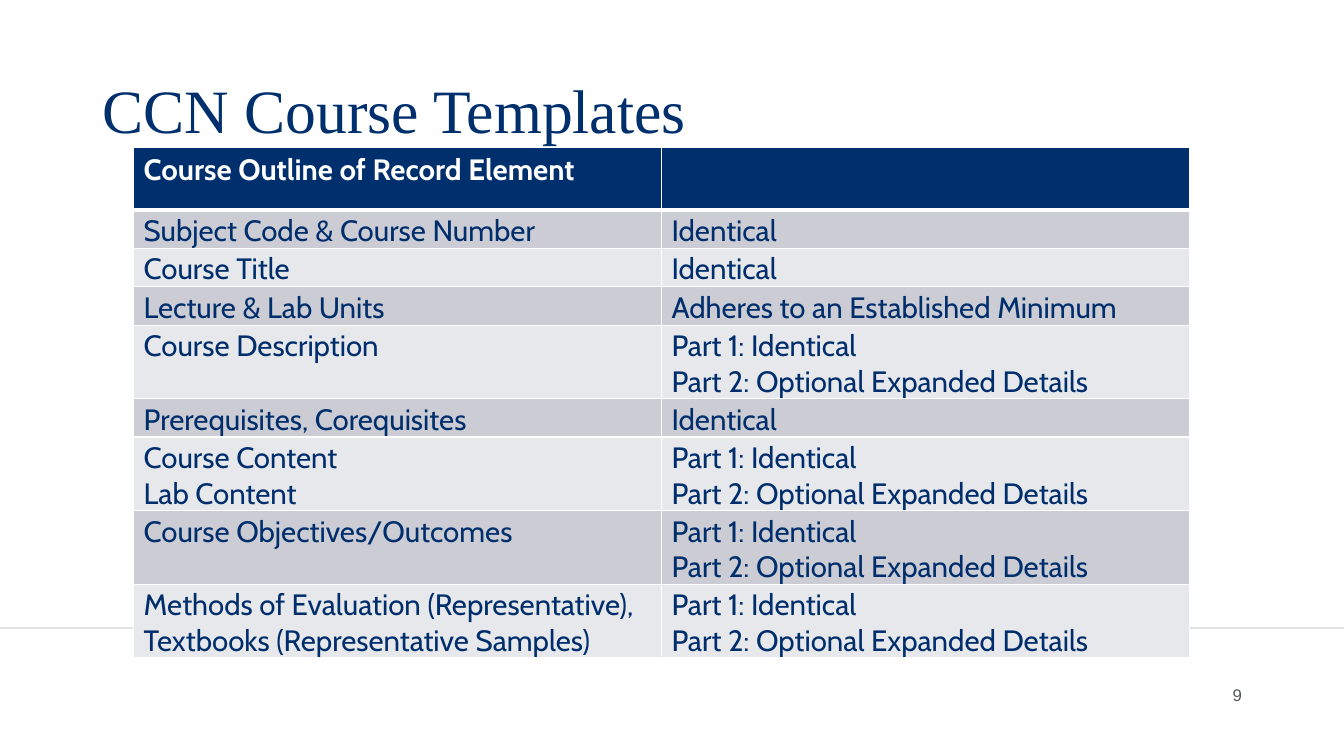
import pptx
import pptx.dml.color
import pptx.enum.shapes
import pptx.enum.text
import pptx.oxml
import pptx.oxml.ns
import pptx.util

RGB = pptx.dml.color.RGBColor
NAVY = RGB(0x00, 0x2F, 0x6D)
INK = RGB(0x00, 0x2E, 0x6C)
WHITE = RGB(0xFF, 0xFF, 0xFF)
DARK = RGB(0xCC, 0xCD, 0xD4)
LIGHT = RGB(0xE7, 0xE8, 0xEB)
RULE = RGB(0xE3, 0xE5, 0xE5)
GREY = RGB(0x53, 0x57, 0x5A)

ALIGN = pptx.enum.text.PP_ALIGN
PARTS = ["Part 1: Identical", "Part 2: Optional Expanded Details"]
ROWS = [
    (8.27, ["Course Outline of Record Element"], []),
    (5.07, ["Subject Code & Course Number"], ["Identical"]),
    (5.07, ["Course Title"], ["Identical"]),
    (5.07, ["Lecture & Lab Units"], ["Adheres to an Established Minimum"]),
    (9.6, ["Course Description"], PARTS),
    (5.07, ["Prerequisites, Corequisites"], ["Identical"]),
    (9.07, ["Course Content", "Lab Content"], PARTS),
    (9.07, ["Course Objectives/Outcomes"], PARTS),
    (9.07, ["Methods of Evaluation (Representative),",
            "Textbooks (Representative Samples)"], PARTS),
]


class Deck:
    def __init__(self):
        self.show = pptx.Presentation()
        self.show.slide_width = pptx.util.Inches(13.33)
        self.show.slide_height = pptx.util.Inches(7.5)
        self.slide = self.show.slides.add_slide(self.show.slide_layouts[6])

    def wide(self, share):
        return round(self.show.slide_width * share / 100)

    def high(self, share):
        return round(self.show.slide_height * share / 100)

    def box(self, left, top, width, height):
        return self.wide(left), self.high(top), self.wide(width), self.high(height)

    def run(self, para, text, size, face, color, bold=False):
        run = para.add_run()
        run.text = text
        font = run.font
        font.size = pptx.util.Pt(size)
        font.name = face
        font.bold = bold
        font.color.rgb = color

    def text(self, place, text, size, face, color, align=ALIGN.LEFT, space=1.0):
        frame = self.slide.shapes.add_textbox(*self.box(*place)).text_frame
        frame.word_wrap = True
        frame.vertical_anchor = pptx.enum.text.MSO_ANCHOR.MIDDLE
        para = frame.paragraphs[0]
        para.alignment = align
        para.line_spacing = space
        self.run(para, text, size, face, color)

    def line(self, top, color):
        line = self.slide.shapes.add_connector(
            pptx.enum.shapes.MSO_CONNECTOR.STRAIGHT,
            0, self.high(top), self.wide(100), self.high(top))
        line.line.color.rgb = color
        line.line.width = pptx.util.Pt(1)
        props = line._element.spPr
        props.append(pptx.oxml.parse_xml(
            f'<a:effectLst {pptx.oxml.ns.nsdecls("a")}/>'))

    def edge(self, cell, side, width, color):
        cell._tc.get_or_add_tcPr().append(pptx.oxml.parse_xml(
            f'<a:ln{side} {pptx.oxml.ns.nsdecls("a")} w="{pptx.util.Pt(width)}">'
            f'<a:solidFill><a:srgbClr val="{color}"/></a:solidFill></a:ln{side}>'))

    def cell(self, cell, lines, row):
        head = row == 0
        for side in "LRTB":
            thick = (row, side) in ((0, "B"), (1, "T"))
            self.edge(cell, side, 3 if thick else 1, WHITE)
        cell.fill.solid()
        cell.fill.fore_color.rgb = NAVY if head else DARK if row % 2 else LIGHT
        cell.margin_left = cell.margin_right = cell.margin_bottom = 0
        cell.margin_top = pptx.util.Inches(0.04 if head else 0.03)
        frame = cell.text_frame
        for num, text in enumerate(lines):
            para = frame.add_paragraph() if num else frame.paragraphs[0]
            para._p.get_or_add_pPr().set("marL", str(pptx.util.Inches(0.1)))
            self.run(para, text, 21, "Cabin", WHITE if head else INK, head)

    def table(self, left, top, width, rows):
        place = self.box(left, top, width, sum(row[0] for row in rows))
        table = self.slide.shapes.add_table(len(rows), 2, *place).table
        for col in table.columns:
            col.width = self.wide(width / 2)
        for num, (height, *cells) in enumerate(rows):
            table.rows[num].height = self.high(height)
            for col, lines in enumerate(cells):
                self.cell(table.cell(num, col), lines, num)


def main():
    deck = Deck()
    deck.line(83.07, RULE)
    deck.text((6.9, 5.33, 86.25, 19.33), "CCN Course Templates",
              44, "Times New Roman", NAVY, space=0.9)
    deck.text((70.65, 89.2, 22.5, 5.33), "9", 12, "Arial", GREY, ALIGN.RIGHT)
    deck.table(9.94, 19.53, 78.56, ROWS)
    deck.show.save("out.pptx")


if __name__ == "__main__":
    main()
